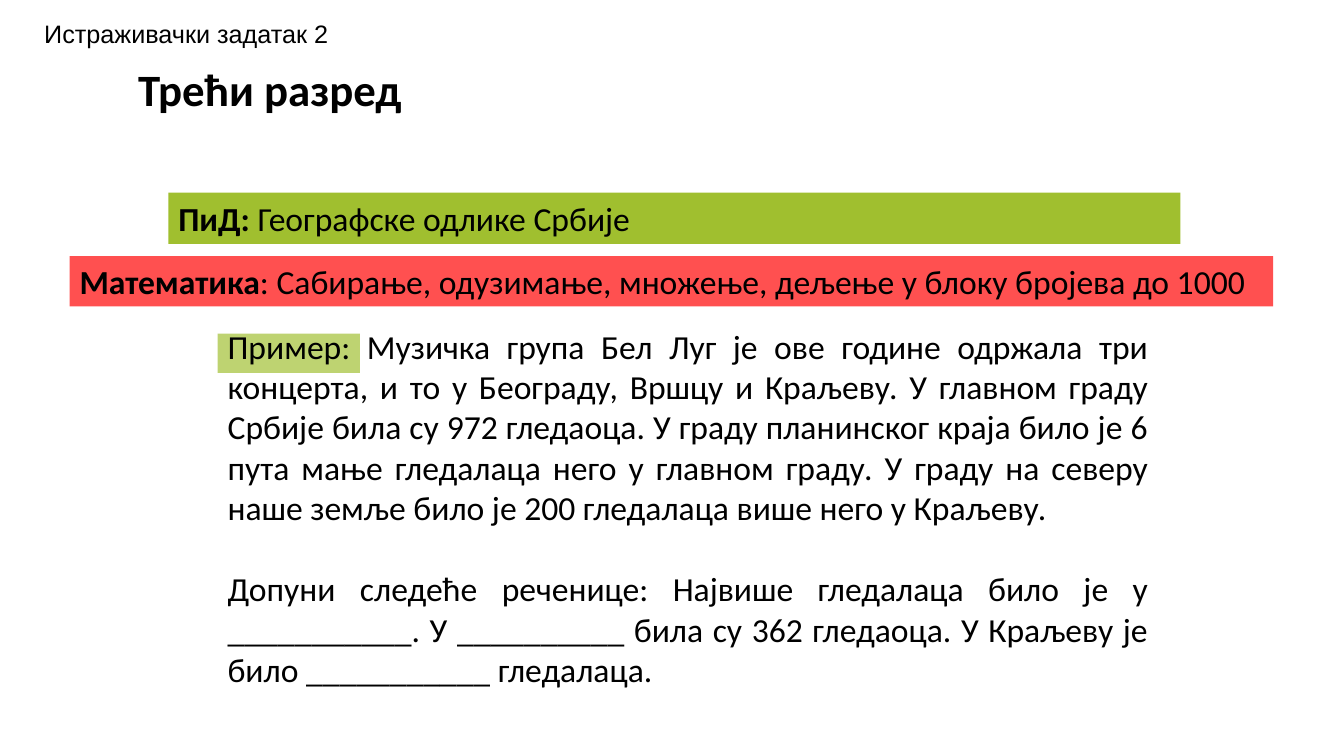
"""Builds the slide with a third-grade research task."""
from pptx import Presentation
from pptx.dml.color import RGBColor
from pptx.enum.shapes import MSO_SHAPE as Preset
from pptx.enum.text import MSO_ANCHOR as Anchor, PP_ALIGN as Align
from pptx.oxml.ns import qn
from pptx.oxml.xmlchemy import OxmlElement
from pptx.util import Inches, Pt

GREEN, RED, BLACK = "A0BF2F", "FF5050", "000000"
TASK = [
    "Пример: Музичка група Бел Луг је ове године одржала три концерта, и то у "
    "Београду, Вршцу и Краљеву. У главном граду Србије била су 972 гледаоца. "
    "У граду планинског краја било је 6 пута мање гледалаца него у главном "
    "граду. У граду на северу наше земље било је 200 гледалаца више него у "
    "Краљеву.",
    "Допуни следеће реченице: Највише гледалаца било је у ___________. "
    "У __________ била су 362 гледаоца. У Краљеву је било ___________ "
    "гледалаца.",
]


def color(value):
    """Turn a hex string into a colour."""
    return RGBColor.from_string(value)


def write(paragraph, text, size=24, font="Calibri", bold=False, fill=BLACK):
    """Add a formatted run of text to a paragraph."""
    run = paragraph.add_run()
    run.text = text
    run.font.size = Pt(size)
    run.font.name = font
    run.font.bold = bold
    run.font.color.rgb = color(fill)


class SlideBuilder:
    """Places elements on one slide, in percent of its width and height."""

    def __init__(self, presentation):
        """Add a title-only slide to the presentation."""
        self.width = presentation.slide_width
        self.height = presentation.slide_height
        self.slide = presentation.slides.add_slide(presentation.slide_layouts[5])

    def box(self, left, top, width, height):
        """Convert percentages to slide lengths."""
        return (int(self.width * left / 100), int(self.height * top / 100),
                int(self.width * width / 100), int(self.height * height / 100))

    def title(self, text, *place):
        """Move and fill the title placeholder."""
        shape = self.slide.shapes.title
        shape.left, shape.top, shape.width, shape.height = self.box(*place)
        shape.text_frame.word_wrap = True
        shape.text_frame.vertical_anchor = Anchor.TOP
        paragraph = shape.text_frame.paragraphs[0]
        paragraph.alignment = Align.LEFT
        paragraph.line_spacing = 0.9
        write(paragraph, text, size=32, bold=True)

    def bar(self, fill, *place, opacity=100):
        """Draw a borderless filled rectangle."""
        shape = self.slide.shapes.add_shape(Preset.RECTANGLE, *self.box(*place))
        shape.shadow.inherit = False
        shape.fill.solid()
        shape.fill.fore_color.rgb = color(fill)
        shape.line.fill.background()
        if opacity < 100:
            alpha = OxmlElement("a:alpha")
            alpha.set("val", str(opacity * 1000))
            shape.element.spPr.find(".//" + qn("a:srgbClr")).append(alpha)
        return shape

    def subject(self, name, topic, fill, *place):
        """Draw a bar with a bold subject name and its topic."""
        frame = self.bar(fill, *place).text_frame
        frame.word_wrap = True
        frame.vertical_anchor = Anchor.MIDDLE
        paragraph = frame.paragraphs[0]
        paragraph.alignment = Align.LEFT
        write(paragraph, name, bold=True)
        write(paragraph, topic)

    def text(self, lines, *place, align=Align.LEFT, gap=0, **style):
        """Add a wrapping text box with one paragraph per line."""
        frame = self.slide.shapes.add_textbox(*self.box(*place)).text_frame
        frame.word_wrap = True
        for index, line in enumerate(lines):
            paragraph = frame.add_paragraph() if index else frame.paragraphs[0]
            paragraph.alignment = align
            paragraph.space_before = Pt(gap if index else 0)
            write(paragraph, line, **style)


def main():
    """Build and save the presentation."""
    presentation = Presentation()
    presentation.slide_width = Inches(13.33)
    presentation.slide_height = Inches(7.5)
    builder = SlideBuilder(presentation)
    builder.bar(GREEN, 16.2, 44.13, 10.58, 5.2, opacity=68)
    builder.title("Трећи разред", 9.53, 8.27, 70.88, 16.67)
    builder.subject("Математика",
                    ": Сабирање, одузимање, множење, дељење у блоку бројева до 1000",
                    RED, 5.18, 33.87, 89.55, 6.67)
    builder.subject("ПиД: ", "Географске одлике Србије",
                    GREEN, 12.53, 25.47, 75.3, 6.8)
    builder.text(TASK, 16.2, 42.4, 69.98, 49.87, align=Align.JUSTIFY, gap=29.3)
    builder.text(["Истраживачки задатак 2"], 2.55, 1.73, 42.45, 5.33,
                 size=18, font="Arial")
    presentation.save("out.pptx")


if __name__ == "__main__":
    main()
